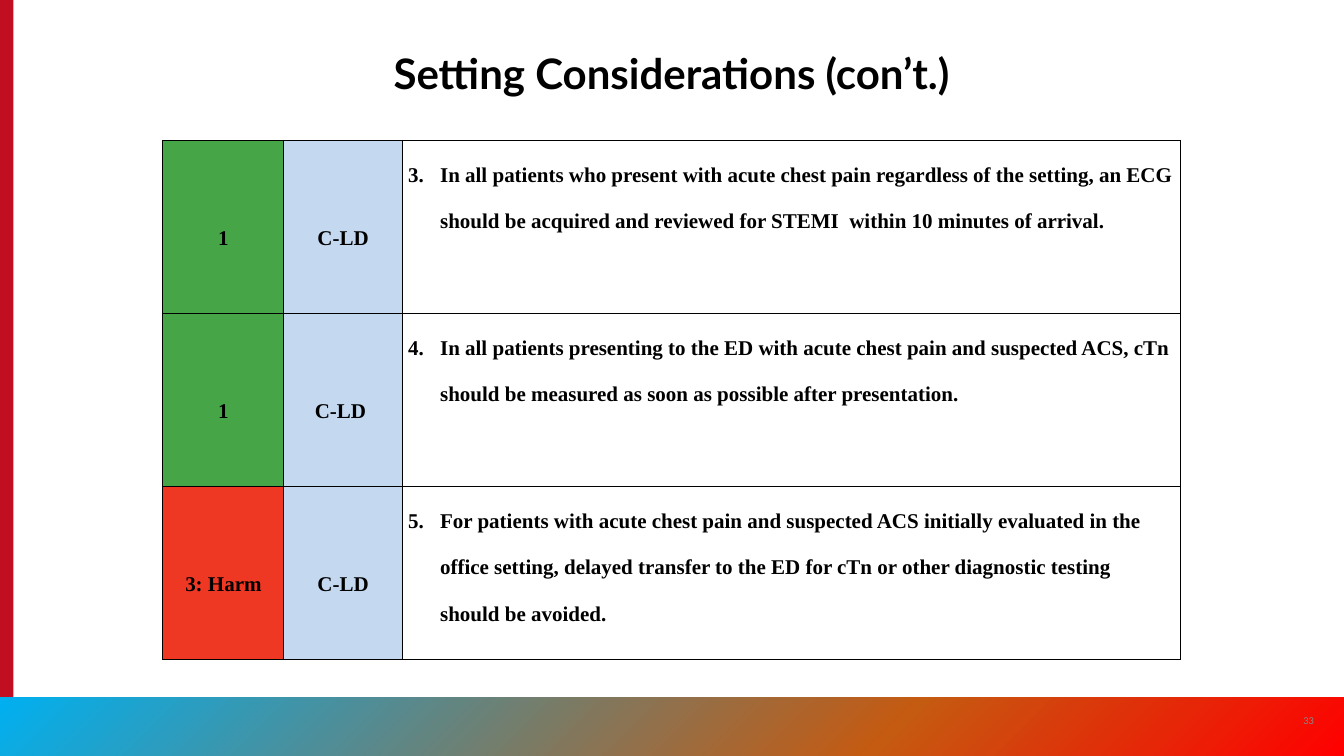
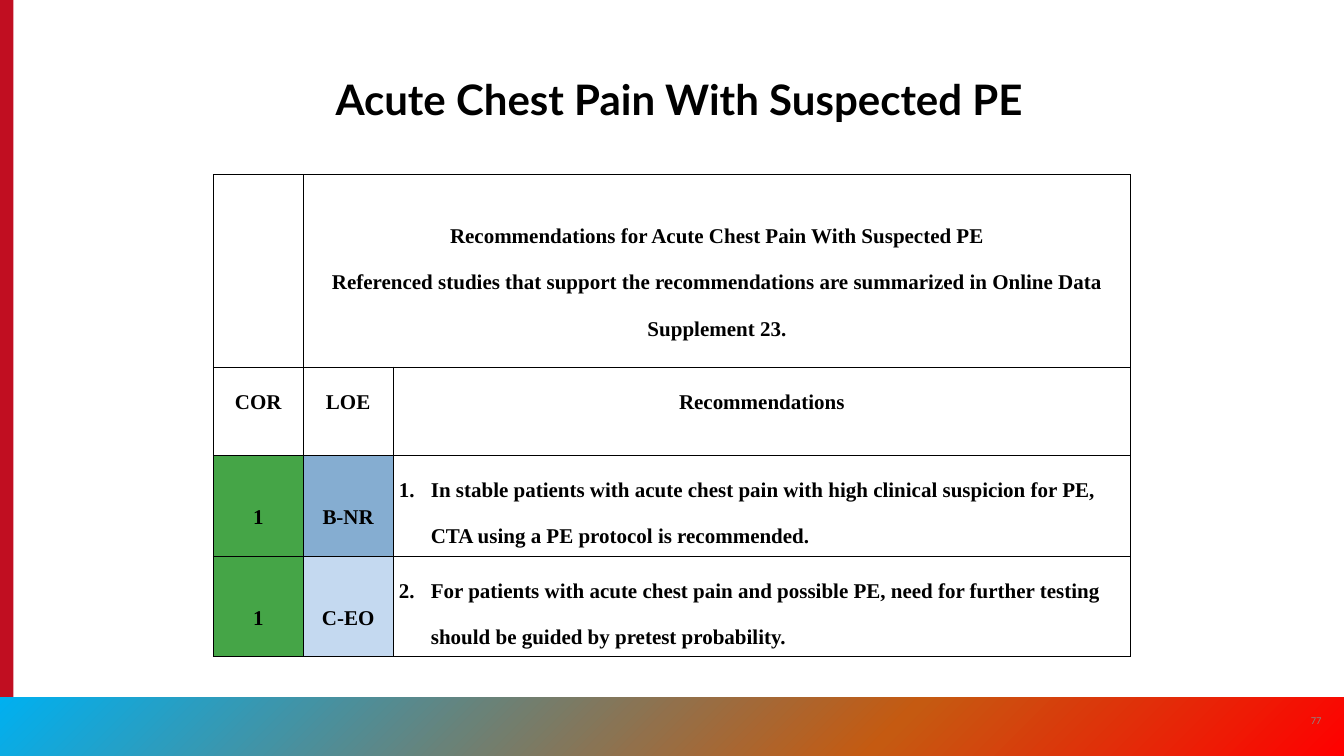
from lxml import etree
from pptx import Presentation
from pptx.dml.color import RGBColor
from pptx.enum.shapes import MSO_SHAPE
from pptx.enum.text import MSO_ANCHOR, MSO_AUTO_SIZE, PP_ALIGN
from pptx.oxml import parse_xml
from pptx.oxml.ns import qn
from pptx.util import Inches, Pt

RECT = MSO_SHAPE.RECTANGLE
TOP, MIDDLE = MSO_ANCHOR.TOP, MSO_ANCHOR.MIDDLE
LEFT, CENTER = PP_ALIGN.LEFT, PP_ALIGN.CENTER
FIXED = MSO_AUTO_SIZE.NONE
SANS, SERIF = "Lato", "Times New Roman"
NS = "http://schemas.openxmlformats.org/drawingml/2006/main"
COLORS = {
    "black": "000000", "gray": "8A8B8A", "crimson": "C10E21",
    "sky": "00B0F0", "rust": "C55A11", "red": "FF0000",
    "green": "45A547", "harm": "EF3824", "pale": "C4D9F0", "steel": "85ADD1",
}
STOPS = [(0, "sky"), (66, "rust"), (100, "red")]


def color(name):
    return RGBColor.from_string(COLORS[name])


def write(frame, text, font=SERIF, size=18, tint="black", bold=True,
          align=CENTER, spacing=None, number=None):
    frame.word_wrap = True
    for i, line in enumerate(text.split("\n")):
        para = frame.add_paragraph() if i else frame.paragraphs[0]
        para.alignment = align
        para.space_before = Pt(0)
        if spacing:
            para.line_spacing = spacing
        if number:
            props = para._p.get_or_add_pPr()
            props.set("marL", str(Inches(0.38)))
            props.set("indent", str(Inches(-0.38)))
            etree.SubElement(props, qn("a:buFont"), typeface=font)
            etree.SubElement(props, qn("a:buAutoNum"),
                             type="arabicPeriod", startAt=str(number))
        run = para.add_run()
        run.text = line
        run.font.name = font
        run.font.size = Pt(size)
        run.font.bold = bold
        run.font.color.rgb = color(tint)


def add_band(slide, box):
    band = slide.shapes.add_shape(RECT, *map(Inches, box))
    band.shadow.inherit = False
    band.line.fill.background()
    return band


def add_frame(slide, page, left):
    side = add_band(slide, (0, 0, 0.16, 9))
    side.fill.solid()
    side.fill.fore_color.rgb = color("crimson")
    foot = add_band(slide, (0, 8.3, 16, 0.7))
    stops = "".join(
        f'<a:gs pos="{pos * 1000}"><a:srgbClr val="{COLORS[name]}"/></a:gs>'
        for pos, name in STOPS)
    foot._element.spPr.find(qn("a:prstGeom")).addnext(parse_xml(
        f'<a:gradFill xmlns:a="{NS}" rotWithShape="1"><a:gsLst>{stops}</a:gsLst>'
        '<a:lin ang="2700000" scaled="0"/></a:gradFill>'))
    box = slide.shapes.add_textbox(*map(Inches, (left, 8.34, 0.48, 0.48)))
    box.text_frame.vertical_anchor = MIDDLE
    write(box.text_frame, page, font=SANS, size=8, tint="gray", bold=False)


def add_title(slide, text, box, spacing):
    title = slide.shapes.title
    title.left, title.top, title.width, title.height = map(Inches, box)
    frame = title.text_frame
    frame.auto_size = FIXED
    frame.vertical_anchor = TOP
    write(frame, text, font=SANS, size=36, spacing=spacing)


def style_cell(cell, fill):
    cell.margin_left = cell.margin_right = Inches(0.07)
    cell.margin_top = cell.margin_bottom = 0
    props = cell._tc.get_or_add_tcPr()
    for edge in "LRTB":
        props.append(parse_xml(
            f'<a:ln{edge} xmlns:a="{NS}" w="12700"><a:solidFill>'
            f'<a:srgbClr val="{COLORS["black"]}"/></a:solidFill></a:ln{edge}>'))
    if fill:
        cell.fill.solid()
        cell.fill.fore_color.rgb = color(fill)
    else:
        cell.fill.background()


def add_grid(slide, spot, cols, heights, rows):
    size = (sum(cols), sum(heights))
    table = slide.shapes.add_table(
        len(rows), len(cols), *map(Inches, spot + size)).table
    table.first_row = table.horz_banding = False
    for col, width in zip(table.columns, cols):
        col.width = Inches(width)
    for r, (height, row) in enumerate(zip(heights, rows)):
        table.rows[r].height = Inches(height)
        for c, (text, fill, anchor, number) in enumerate(row):
            cell = table.cell(r, c)
            style_cell(cell, fill)
            cell.vertical_anchor = anchor
            if text:
                write(cell.text_frame, text, spacing=2.0, number=number,
                      align=LEFT if number else CENTER)
    return table


def advice(rank, tint, level, shade, number, text):
    return [(rank, tint, MIDDLE, None), (level, shade, MIDDLE, None),
            (text, None, TOP, number)]


def plain(texts, anchor):
    return [(text, None, anchor, None) for text in texts]


def add_setting(slide):
    add_frame(slide, "33", 15.34)
    add_title(slide, "Setting Considerations (con’t.)", (3.6, 0.58, 8.79, 0.63), 0.9)
    add_grid(slide, (1.94, 1.67), (1.44, 1.41, 9.27), [2.06] * 3, [
        advice("1", "green", "C-LD", "pale", 3,
               "In all patients who present with acute chest pain regardless of the "
               "setting, an ECG should be acquired and reviewed for STEMI  within "
               "10 minutes of arrival."),
        advice("1", "green", "C-LD ", "pale", 4,
               "In all patients presenting to the ED with acute chest pain and "
               "suspected ACS, cTn should be measured as soon as possible after "
               "presentation."),
        advice("3: Harm", "harm", "C-LD", "pale", 5,
               "For patients with acute chest pain and suspected ACS initially "
               "evaluated in the office setting, delayed transfer to the ED for cTn "
               "or other diagnostic testing should be avoided."),
    ])


def add_suspect(slide):
    add_frame(slide, "77", 15.43)
    add_title(slide, "Acute Chest Pain With Suspected PE", (2.49, 0.83, 11.19, 1), 1.0)
    head = ("Recommendations for Acute Chest Pain With Suspected PE\n"
            "Referenced studies that support the recommendations are summarized "
            "in Online Data Supplement 23.")
    table = add_grid(
        slide, (2.54, 2.08), (1.07, 1.07, 8.78), (2.29, 1.05, 1.17, 1.17), [
            plain(["", head, ""], MIDDLE),
            plain(["COR", "LOE", "Recommendations"], TOP),
            advice("1", "green", "B-NR", "steel", 1,
                   "In stable patients with acute chest pain with high clinical "
                   "suspicion for PE, CTA using a PE protocol is recommended."),
            advice("1", "green", "C-EO", "pale", 2,
                   "For patients with acute chest pain and possible PE, need for "
                   "further testing should be guided by pretest probability."),
        ])
    table.cell(0, 1).merge(table.cell(0, 2))


def main():
    deck = Presentation()
    deck.slide_width, deck.slide_height = Inches(16), Inches(9)
    for build in (add_setting, add_suspect):
        build(deck.slides.add_slide(deck.slide_layouts[5]))
    deck.save("out.pptx")


if __name__ == "__main__":
    main()
